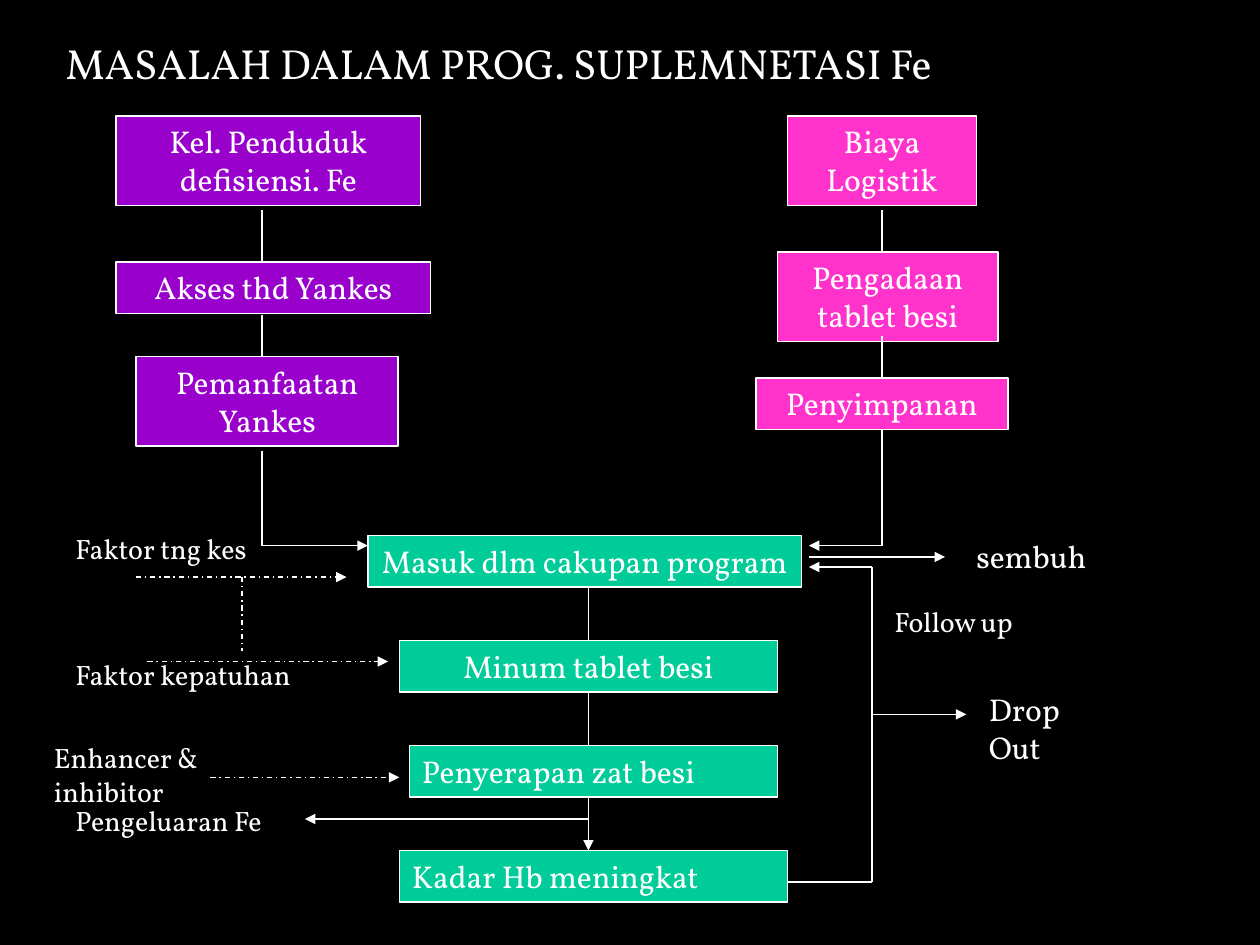
from lxml import etree
from pptx import Presentation
from pptx.dml.color import RGBColor
from pptx.enum.dml import MSO_LINE
from pptx.enum.shapes import MSO_CONNECTOR, MSO_SHAPE
from pptx.enum.text import MSO_ANCHOR, PP_ALIGN
from pptx.oxml.ns import qn
from pptx.util import Inches, Pt

BLACK = RGBColor(0x00, 0x00, 0x00)
WHITE = RGBColor(0xFF, 0xFF, 0xFF)
PURPLE = RGBColor(0x99, 0x00, 0xCC)
PINK = RGBColor(0xFF, 0x33, 0xCC)
GREEN = RGBColor(0x00, 0xCC, 0x99)
FONT = "Vollkorn"
CENTER, LEFT = PP_ALIGN.CENTER, PP_ALIGN.LEFT
TOP = MSO_ANCHOR.TOP
DASH_DOT = MSO_LINE.DASH_DOT
STRAIGHT = MSO_CONNECTOR.STRAIGHT
RECTANGLE = MSO_SHAPE.RECTANGLE
TOP_SIDE, BOTTOM_SIDE = 0, 2
ONE_LINE, TWO_LINES = 0.41, 0.71


def write(frame, wording, size, align=LEFT, wrap=True):
    frame.text = wording
    frame.word_wrap = wrap
    frame.vertical_anchor = TOP
    paragraph = frame.paragraphs[0]
    paragraph.alignment = align
    paragraph.font.name = FONT
    paragraph.font.size = Pt(size)
    paragraph.font.color.rgb = WHITE


def add_step(slide, wording, box, color, align=CENTER, wrap=True):
    step = slide.shapes.add_shape(RECTANGLE, *map(Inches, box))
    step.shadow.inherit = False
    step.fill.solid()
    step.fill.fore_color.rgb = color
    step.line.color.rgb = WHITE
    step.line.width = Pt(0.75)
    write(step.text_frame, wording, 18, align, wrap)
    return step


def add_label(slide, wording, box, size=16, wrap=False):
    label = slide.shapes.add_textbox(*map(Inches, box))
    write(label.text_frame, wording, size, wrap=wrap)


def add_link(slide, start, end, arrow=False, dash=None):
    link = slide.shapes.add_connector(STRAIGHT, *map(Inches, (*start, *end)))
    link.line.color.rgb = WHITE
    link.line.width = Pt(0.75)
    if dash is not None:
        link.line.dash_style = dash
    if arrow:
        etree.SubElement(link.line._get_or_add_ln(), qn("a:tailEnd"), type="triangle")
    etree.SubElement(link._element.spPr, qn("a:effectLst"))
    return link


def add_route(slide, *points):
    """Link the points in turn, with an arrowhead at the last one."""
    links = []
    for i, (start, end) in enumerate(zip(points, points[1:]), 1):
        links.append(add_link(slide, start, end, arrow=i == len(points) - 1))
    return links


def add_title(slide, left, top, width, height):
    title = slide.shapes.title
    title.left, title.top = Inches(left), Inches(top)
    title.width, title.height = Inches(width), Inches(height)
    write(title.text_frame, "MASALAH DALAM PROG. SUPLEMNETASI Fe", 24, wrap=False)


def add_access_column(slide, left, top):
    for wording, dx, dy, width, height in (
        ("Kel. Penduduk defisiensi. Fe", 0, 0, 2.42, TWO_LINES),
        ("Akses thd Yankes", 0, 1.16, 2.5, ONE_LINE),
        ("Pemanfaatan Yankes", 0.16, 1.91, 2.08, TWO_LINES),
    ):
        add_step(slide, wording, (left + dx, top + dy, width, height), PURPLE)
    axis = left + 1.16
    for start, end in ((0.75, 1.16), (1.58, 1.91)):
        add_link(slide, (axis, top + start), (axis, top + end))
    entry = top + 3.41
    add_route(slide, (axis, top + 2.66), (axis, entry), (left + 2, entry))


def add_supply_column(slide, left, top):
    for wording, dx, dy, width, height in (
        ("Biaya Logistik", 0.25, 0, 1.5, TWO_LINES),
        ("Pengadaan tablet besi", 0.17, 1.08, 1.75, TWO_LINES),
        ("Penyimpanan", 0, 2.08, 2, ONE_LINE),
    ):
        storage = add_step(slide, wording, (left + dx, top + dy, width, height), PINK)
    axis = left + 1
    add_link(slide, (axis, top + 0.75), (axis, top + 1.08))
    into_storage = add_link(slide, (axis, top + 1.75), (axis, top + 2.08))
    into_storage.end_connect(storage, TOP_SIDE)
    entry = top + 3.41
    out_of_storage, _ = add_route(
        slide, (axis, top + 2.49), (axis, entry), (left + 0.42, entry))
    out_of_storage.begin_connect(storage, BOTTOM_SIDE)


def add_programme_chain(slide, left, top):
    pitch = 2.5 / 3
    axis = left + 1.75
    steps = []
    for i, (wording, dx, width, align) in enumerate((
        ("Masuk dlm cakupan program", 0, 3.44, CENTER),
        ("Minum tablet besi", 0.25, 3, CENTER),
        ("Penyerapan zat besi", 0.33, 2.92, LEFT),
        ("Kadar Hb meningkat", 0.25, 3.08, LEFT),
    )):
        box = (left + dx, top + i * pitch, width, ONE_LINE)
        steps.append(add_step(slide, wording, box, GREEN, align, wrap=i > 0))
    links = []
    for i in range(3):
        row = top + i * pitch
        links.append(add_link(slide, (axis, row + ONE_LINE), (axis, row + pitch),
                              arrow=i == 2))
    intake = steps[1]
    links[0].end_connect(intake, TOP_SIDE)
    links[1].begin_connect(intake, BOTTOM_SIDE)
    loss = top + 2.25
    add_link(slide, (axis, loss), (left - 0.5, loss), arrow=True)


def add_factors(slide, left, top):
    for wording, dx, dy, width, wrap in (
        ("Faktor tng kes", 0.17, 0, 1.61, False),
        ("Faktor kepatuhan", 0.17, 1, 1.93, False),
        ("Enhancer & inhibitor", 0, 1.66, 2.2, True),
        ("Pengeluaran Fe", 0.17, 2.16, 1.78, False),
    ):
        add_label(slide, wording, (left + dx, top + dy, width, 0.37), wrap=wrap)
    for start, end, dy in ((0.75, 2.42, 0.41), (0.84, 2.75, 1.08), (1.34, 2.84, 2)):
        add_link(slide, (left + start, top + dy), (left + end, top + dy),
                 arrow=True, dash=DASH_DOT)
    branch = left + 1.59
    add_link(slide, (branch, top + 0.41), (branch, top + 1), dash=DASH_DOT)


def add_outcomes(slide, left, top):
    """Place recovery, the follow-up loop and the drop-out branch."""
    entry, loop = left + 0.17, left + 0.67
    recovery, follow_up, drop_out, finish = (top + dy for dy in (0.25, 0.33, 1.5, 2.83))
    add_link(slide, (entry, recovery), (left + 1.25, recovery), arrow=True)
    add_route(slide, (left, finish), (loop, finish), (loop, follow_up),
              (entry, follow_up))
    add_link(slide, (loop, drop_out), (left + 1.42, drop_out), arrow=True)
    add_label(slide, "sembuh", (left + 1.4, top + 0.04, 1.09, 0.4), 18)
    add_label(slide, "Follow up", (left + 0.75, top + 0.58, 1.15, 0.37))
    add_label(slide, "Drop Out", (left + 1.5, top + 1.26, 1.2, 0.4), 18, wrap=True)


def main():
    deck = Presentation()
    deck.slide_width, deck.slide_height = Inches(10), Inches(7.5)
    slide = deck.slides.add_slide(deck.slide_layouts[5])
    slide.background.fill.solid()
    slide.background.fill.fore_color.rgb = BLACK
    add_title(slide, 0.42, 0.25, 7.35, 0.5)
    add_access_column(slide, 0.92, 0.92)
    add_supply_column(slide, 6, 0.92)
    add_programme_chain(slide, 2.92, 4.25)
    add_factors(slide, 0.33, 4.17)
    add_outcomes(slide, 6.25, 4.17)
    deck.save("out.pptx")


if __name__ == "__main__":
    main()
